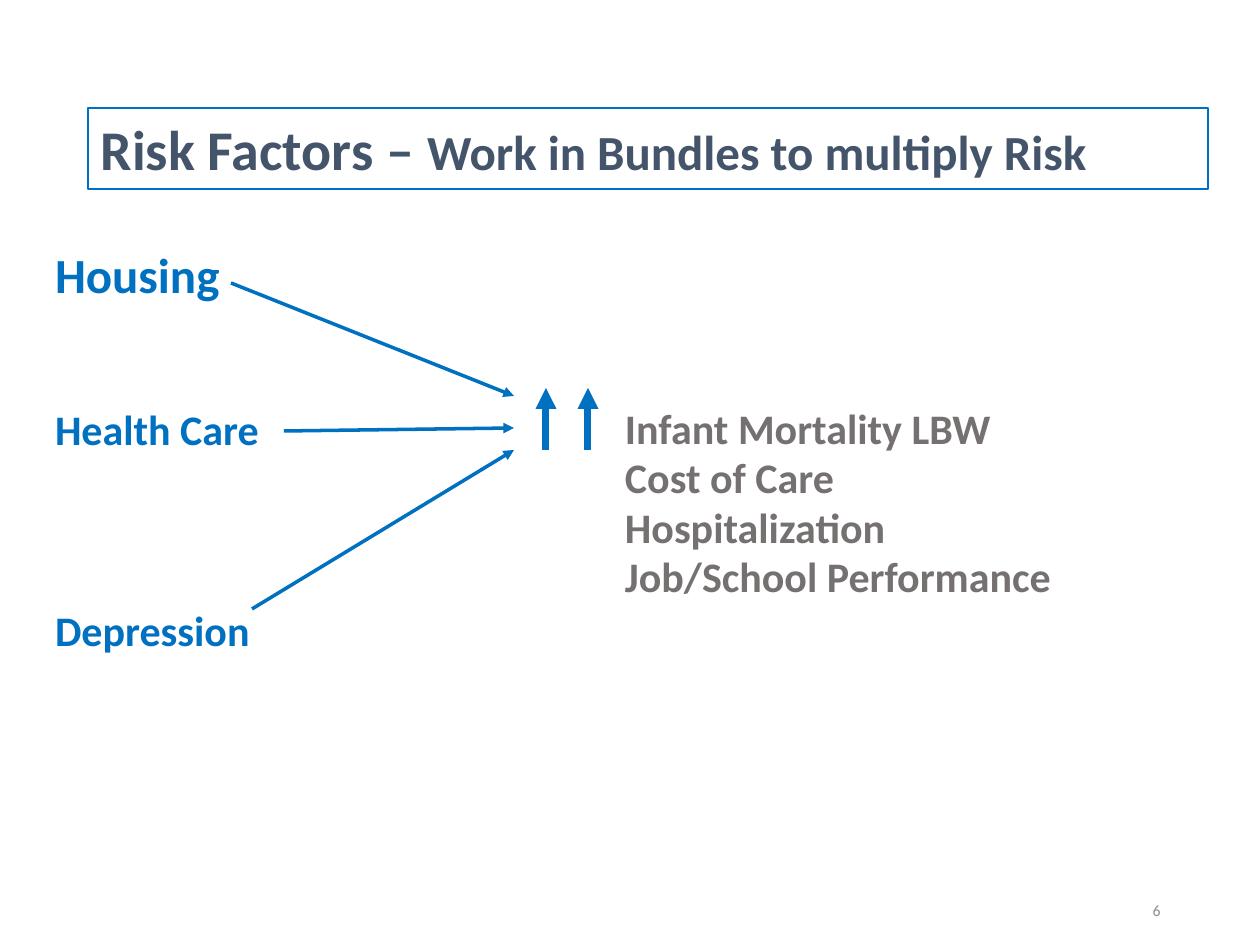
from dataclasses import dataclass

from lxml import etree
from pptx import Presentation
from pptx import util as u
from pptx.dml.color import RGBColor
from pptx.enum import shapes, text
from pptx.oxml import ns

PX = 914400 // 126  # EMU per px


@dataclass(frozen=True)
class Theme:
    font: str = "Calibri"
    blue: str = "0070C0"
    navy: str = "44546A"
    gray: str = "767171"
    pale: str = "8C8C8C"
    title: int = 32
    large: int = 28
    body: int = 24
    small: int = 9


THEME = Theme()

# Content
TITLE = [("Risk Factors – ", THEME.title),
         ("Work in Bundles to multiply Risk", THEME.large)]
CAUSES = [  # wording, size, gap above in px
    ("Housing", THEME.large, 0),
    ("Health Care", THEME.body, 101),
    ("Depression", THEME.body, 150),
]
OUTCOMES = [(line, THEME.body, 0) for line in (
    "Infant Mortality LBW", "Cost of Care", "Hospitalization",
    "Job/School Performance")]
PAGE_NUMBER = "6"

# Arrows: start, end in px
CAUSE_ARROWS = [((231, 283), (514, 396)),
                ((284, 431), (514, 428)),
                ((252, 609), (514, 450))]
RISE_ARROWS = [((x, 450), (x, 388)) for x in (546, 588)]


def place(shape, left, top, width, height):
    shape.left, shape.top, shape.width, shape.height = (
        value * PX for value in (left, top, width, height))


def style(font, size, color, bold=True):
    font.name, font.size, font.bold = THEME.font, u.Pt(size), bold
    font.color.rgb = RGBColor.from_string(color)


def fill_list(box, lines, color, spacing=1.0):
    frame = box.text_frame
    frame.auto_size = text.MSO_AUTO_SIZE.NONE
    frame.margin_left = frame.margin_right = 0
    frame.margin_top = frame.margin_bottom = 0
    frame.text = "\n".join(line for line, _, _ in lines)
    for para, (_, size, gap) in zip(frame.paragraphs, lines):
        style(para.font, size, color)
        para.line_spacing = spacing
        para.space_before, para.space_after = u.Emu(gap * PX), u.Pt(0)
        properties = para._p.get_or_add_pPr()
        properties.set("marL", "0")
        properties.set("indent", "0")
        bullet = properties.makeelement(ns.qn("a:buNone"), {})
        properties.find(ns.qn("a:defRPr")).addprevious(bullet)


def add_arrow(page, start, end, weight):
    arrow = page.shapes.add_connector(
        shapes.MSO_CONNECTOR.STRAIGHT, *(value * PX for value in start + end))
    arrow.line.color.rgb = RGBColor.from_string(THEME.blue)
    arrow.line.width = u.Pt(weight)
    etree.SubElement(arrow.line._get_or_add_ln(), ns.qn("a:tailEnd"),
                     type="triangle")
    etree.SubElement(arrow._element.spPr, ns.qn("a:effectLst"))


def main():
    deck = Presentation()
    deck.slide_width, deck.slide_height = 1260 * PX, 945 * PX
    page = deck.slides.add_slide(deck.slide_layouts.get_by_name("Two Content"))
    title, causes, outcomes = list(page.placeholders)[:3]

    # Framed title
    place(title, 88, 108, 1120, 81)
    title.line.color.rgb = RGBColor.from_string(THEME.blue)
    title.line.width = u.Pt(1)
    title.text_frame.auto_size = text.MSO_AUTO_SIZE.NONE
    title.text_frame.vertical_anchor = text.MSO_ANCHOR.MIDDLE
    para = title.text_frame.paragraphs[0]
    para.alignment = text.PP_ALIGN.LEFT
    for wording, size in TITLE:
        span = para.add_run()
        span.text = wording
        style(span.font, size, THEME.navy)

    # Causes on the left, outcomes on the right
    place(causes, 55, 244, 230, 420)
    fill_list(causes, CAUSES, THEME.blue)
    place(outcomes, 625, 405, 560, 210)
    fill_list(outcomes, OUTCOMES, THEME.gray, spacing=0.98)

    # Arrows from the causes, and the two that show a rise
    for arrows, weight in ((CAUSE_ARROWS, 2), (RISE_ARROWS, 4)):
        for start, end in arrows:
            add_arrow(page, start, end, weight)

    # Page number
    number = page.shapes.add_textbox(0, 0, 0, 0)
    place(number, 890, 885, 283, 50)
    number.text_frame.word_wrap = True
    number.text_frame.vertical_anchor = text.MSO_ANCHOR.MIDDLE
    number.text_frame.text = PAGE_NUMBER
    para = number.text_frame.paragraphs[0]
    para.alignment = text.PP_ALIGN.RIGHT
    style(para.font, THEME.small, THEME.pale, bold=False)

    deck.save("out.pptx")


if __name__ == "__main__":
    main()
